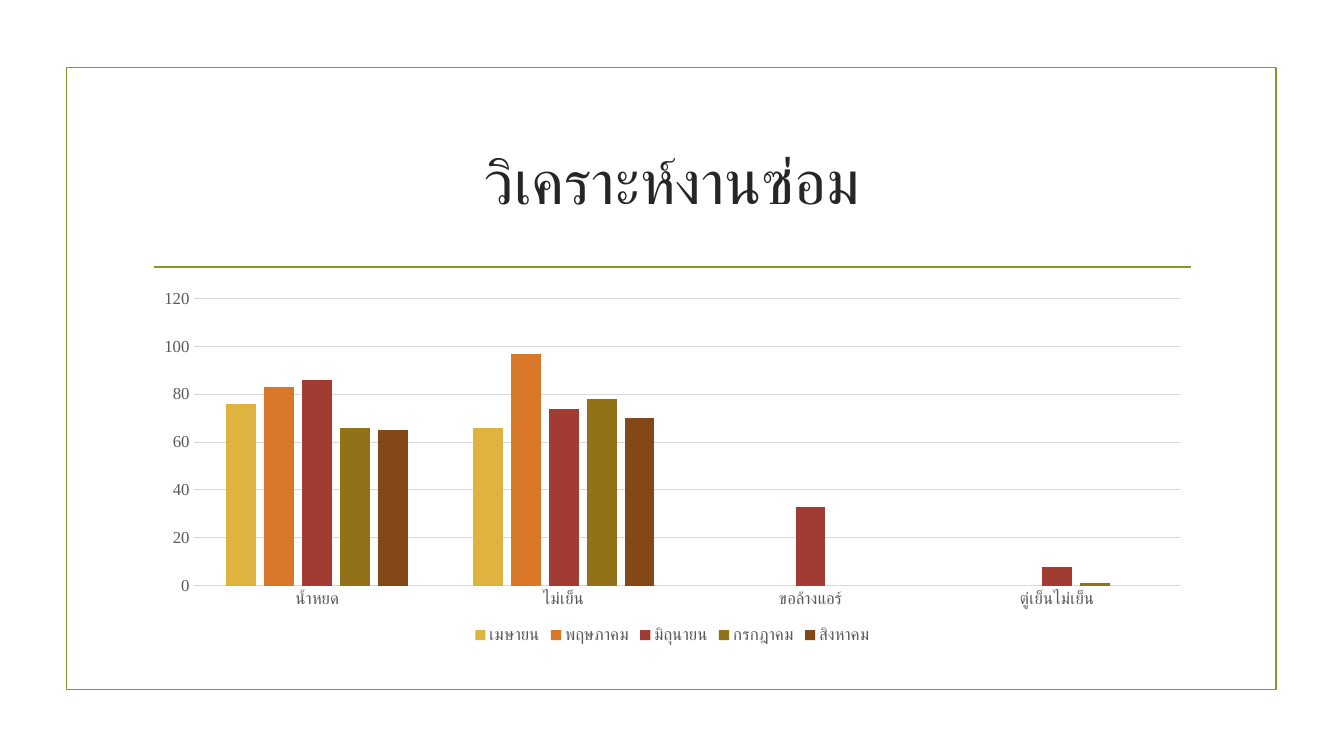
from typing import NamedTuple

from lxml.etree import SubElement
from pptx import Presentation
from pptx.chart.data import CategoryChartData
from pptx.dml.color import RGBColor
from pptx.enum.chart import XL_CHART_TYPE, XL_LEGEND_POSITION, XL_TICK_MARK
from pptx.enum.shapes import MSO_CONNECTOR, MSO_SHAPE
from pptx.enum.text import MSO_ANCHOR, PP_ALIGN
from pptx.oxml.ns import qn
from pptx.util import Inches, Pt

GREEN = RGBColor(0x83, 0x99, 0x2A)
INK = RGBColor(0x26, 0x26, 0x26)
GRAY = RGBColor(0x59, 0x59, 0x59)
PALE = RGBColor(0xD9, 0xD9, 0xD9)
GOLD = RGBColor(0xDE, 0xB3, 0x40)
ORANGE = RGBColor(0xD9, 0x78, 0x28)
RED = RGBColor(0xA2, 0x3C, 0x33)
OLIVE = RGBColor(0x92, 0x71, 0x19)
BROWN = RGBColor(0x83, 0x48, 0x17)
FACE = "Times New Roman"


class Month(NamedTuple):
    name: str
    jobs: tuple
    color: RGBColor


FAULTS = ("น้ำหยด", "ไม่เย็น", "ขอล้างแอร์", "ตู่เย็นไม่เย็น")
MONTHS = (
    Month("เมษายน", (76, 66, None, None), GOLD),
    Month("พฤษภาคม", (83, 97, None, None), ORANGE),
    Month("มิถุนายน", (86, 74, 33, 8), RED),
    Month("กรกฎาคม", (66, 78, None, 1), OLIVE),
    Month("สิงหาคม", (65, 70, None, None), BROWN),
)


def assign(target, values: dict) -> None:
    for name, value in values.items():
        setattr(target, name, value)


def set_font(font, size: float, color: RGBColor) -> None:
    """Style Latin and Thai text alike."""
    assign(font, {"name": FACE, "size": Pt(size), "bold": False})
    font.color.rgb = color
    SubElement(font._element, qn("a:cs"), typeface=FACE)


def set_line(line, color: RGBColor, width: float) -> None:
    line.color.rgb = color
    line.width = Pt(width)


def add_frame(slide) -> None:
    frame = slide.shapes.add_shape(
        MSO_SHAPE.RECTANGLE, Inches(0.66), Inches(0.67), Inches(12), Inches(6.17))
    frame.shadow.inherit = False
    frame.fill.background()
    set_line(frame.line, GREEN, 1.25)
    rule = slide.shapes.add_connector(
        MSO_CONNECTOR.STRAIGHT, Inches(1.53), Inches(2.65), Inches(11.81), Inches(2.65))
    set_line(rule.line, GREEN, 1.25)
    SubElement(rule._element.spPr, qn("a:effectLst"))


def set_title(slide) -> None:
    title = slide.shapes.title
    assign(title, {"left": Inches(1.42), "top": Inches(1.07),
                   "width": Inches(10.5), "height": Inches(1.43)})
    text = title.text_frame
    assign(text, {"text": "วิเคราะห์งานซ่อม", "word_wrap": True,
                  "vertical_anchor": MSO_ANCHOR.MIDDLE})
    line = text.paragraphs[0]
    line.alignment = PP_ALIGN.CENTER
    set_font(line.runs[0].font, 44, INK)


def add_bars(slide) -> None:
    data = CategoryChartData()
    data.categories = FAULTS
    for month in MONTHS:
        data.add_series(month.name, month.jobs)
    chart = slide.shapes.add_chart(
        XL_CHART_TYPE.COLUMN_CLUSTERED, Inches(1.42), Inches(2.8),
        Inches(10.5), Inches(3.63), data).chart
    set_font(chart.font, 12, GRAY)
    assign(chart, {"has_title": False, "has_legend": True})
    assign(chart.legend, {"position": XL_LEGEND_POSITION.BOTTOM,
                          "include_in_layout": False})
    set_font(chart.legend.font, 12, GRAY)

    plot = chart.plots[0]
    assign(plot, {"gap_width": 219, "overlap": -27, "vary_by_categories": False})
    for month, bars in zip(MONTHS, plot.series):
        bars.format.fill.solid()
        bars.format.fill.fore_color.rgb = month.color
        bars.invert_if_negative = False

    for axis in (chart.category_axis, chart.value_axis):
        assign(axis, {"major_tick_mark": XL_TICK_MARK.NONE,
                      "minor_tick_mark": XL_TICK_MARK.NONE})
        set_font(axis.tick_labels.font, 12, GRAY)
    set_line(chart.category_axis.format.line, PALE, 0.75)
    scale = chart.value_axis
    assign(scale, {"minimum_scale": 0, "maximum_scale": 120, "major_unit": 20})
    scale.format.line.fill.background()
    set_line(scale.major_gridlines.format.line, PALE, 0.75)


def main() -> None:
    deck = Presentation()
    assign(deck, {"slide_width": Inches(13.33), "slide_height": Inches(7.5)})
    slide = deck.slides.add_slide(deck.slide_layouts.get_by_name("Title Only"))
    add_frame(slide)
    set_title(slide)
    add_bars(slide)
    deck.save("out.pptx")


if __name__ == "__main__":
    main()
